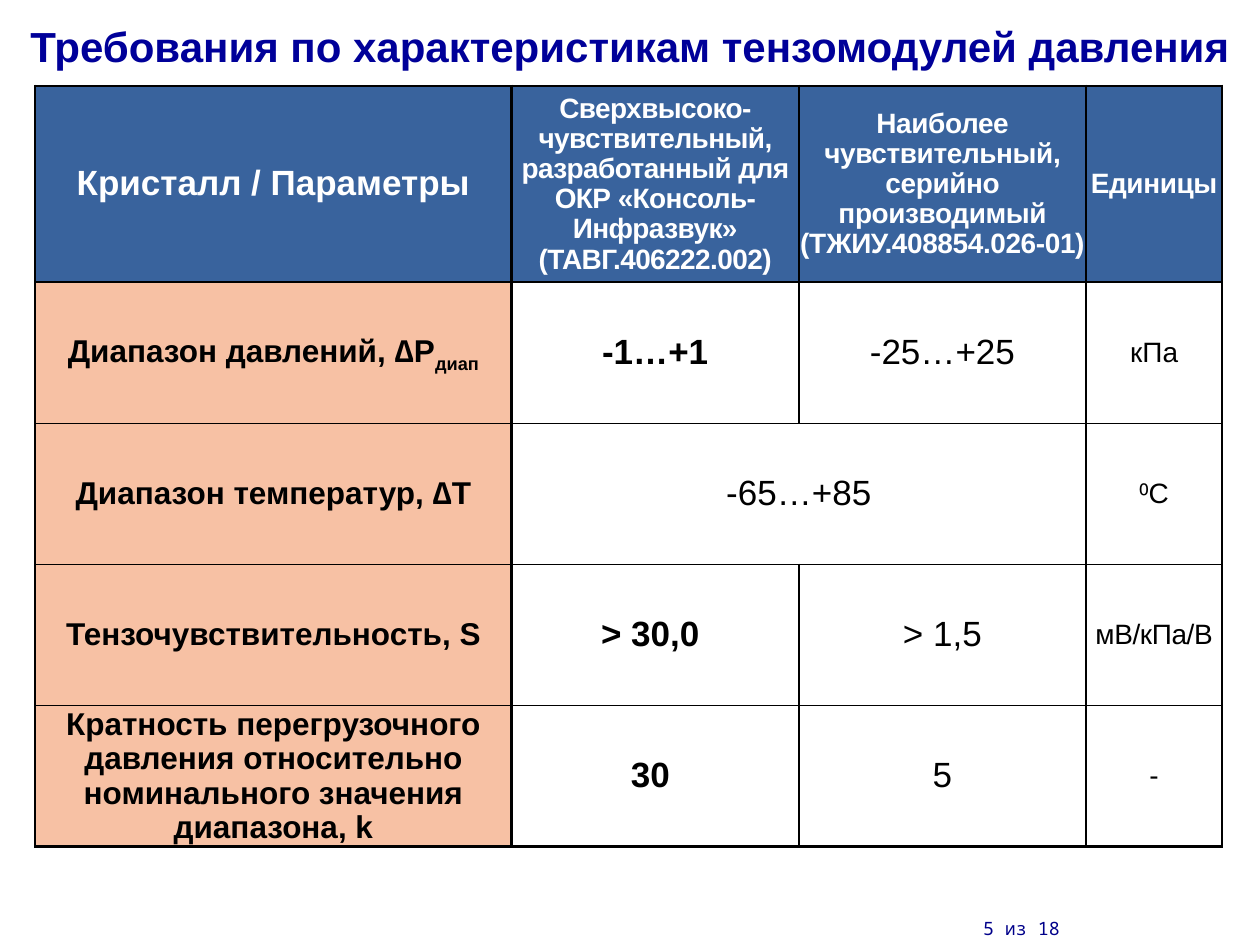
from lxml.etree import SubElement
from pptx import Presentation
from pptx.dml.color import RGBColor
from pptx.enum.text import MSO_ANCHOR, PP_ALIGN
from pptx.oxml.ns import qn
from pptx.util import Inches, Pt

COLORS = {
    "title": "000099",
    "footer": "00008A",
    "header": "39639D",
    "label": "F7C1A4",
    "white": "FFFFFF",
    "black": "000000",
}
COLUMN_WIDTHS = [3.78, 2.28, 2.28, 1.08]
ROW_HEIGHTS = [1.56, 1.12, 1.12, 1.12, 1.12]
VERTICAL_LINES = [1.5, 1.5, 1, 1.5, 1.5]
HORIZONTAL_LINES = [1.5, 1.5, 1, 1, 1, 1.5]
BODY_SIZES = [18, 20, 20, 16]
HEADER_SIZES = [20, 16, 16, 16]
HEADER_SPACING = [0, -0.3, -0.2, -0.2]
SUBSCRIPT = "диап"
TEMPERATURE_ROW = 2

ROWS = [
    [
        "Кристалл / Параметры",
        "Сверхвысоко-чувствительный, разработанный для ОКР «Консоль-Инфразвук»\n(ТАВГ.406222.002)",
        "Наиболее чувствительный, серийно производимый (ТЖИУ.408854.026-01)",
        "Единицы",
    ],
    ["Диапазон давлений, ∆P", "-1…+1", "-25…+25", "кПа"],
    ["Диапазон температур, ∆T", "-65…+85", "", "⁰С"],
    ["Тензочувствительность, S", "> 30,0 ", "> 1,5", "мВ/кПа/В"],
    [
        "Кратность перегрузочного давления относительно номинального значения диапазона, k",
        "30 ",
        "5",
        "-",
    ],
]


class SlideBuilder:
    """Holds the text style and the current slide, and adds elements to it."""

    def __init__(self, slide, font_name="Arial"):
        self.slide = slide
        self.font_name = font_name

    def add_run(self, paragraph, text, size, color, bold=False, spacing=0, baseline=0, font_name=None):
        run = paragraph.add_run()
        run.text = text
        run.font.name = font_name or self.font_name
        run.font.size = Pt(size)
        run.font.bold = bold
        run.font.color.rgb = RGBColor.from_string(COLORS[color])
        properties = run._r.get_or_add_rPr()
        if spacing:
            properties.set("spc", str(round(spacing * 100)))
        if baseline:
            properties.set("baseline", str(baseline * 1000))

    def add_title(self, text):
        title = self.slide.shapes.title
        title.left, title.top = Inches(0), Inches(0.16)
        title.width, title.height = Inches(10), Inches(0.4)
        title.text_frame.vertical_anchor = MSO_ANCHOR.MIDDLE
        paragraph = title.text_frame.paragraphs[0]
        paragraph.alignment = PP_ALIGN.CENTER
        self.add_run(paragraph, text, 24, "title", bold=True)

    def add_footer(self, text):
        box = self.slide.shapes.add_textbox(Inches(6.18), Inches(6.98), Inches(2.33), Inches(0.52))
        box.text_frame.word_wrap = True
        box.text_frame.vertical_anchor = MSO_ANCHOR.BOTTOM
        paragraph = box.text_frame.paragraphs[0]
        paragraph.alignment = PP_ALIGN.RIGHT
        self.add_run(paragraph, text, 10.5, "footer", font_name="Noto Sans Mono")

    def set_borders(self, cell, row, column):
        right = column + (cell.span_width if cell.is_merge_origin else 1)
        widths = {
            "a:lnL": VERTICAL_LINES[column],
            "a:lnR": VERTICAL_LINES[right],
            "a:lnT": HORIZONTAL_LINES[row],
            "a:lnB": HORIZONTAL_LINES[row + 1],
        }
        properties = cell._tc.get_or_add_tcPr()
        for tag, width in widths.items():
            line = SubElement(properties, qn(tag), w=str(Pt(width)))
            fill = SubElement(line, qn("a:solidFill"))
            SubElement(fill, qn("a:srgbClr"), val=COLORS["black"])

    def fill_cell(self, cell, color):
        if color:
            cell.fill.solid()
            cell.fill.fore_color.rgb = RGBColor.from_string(COLORS[color])
        else:
            cell.fill.background()

    def write_cell(self, cell, text, **style):
        cell.vertical_anchor = MSO_ANCHOR.MIDDLE
        cell.margin_left = cell.margin_right = cell.margin_top = Inches(0.01)
        cell.margin_bottom = 0
        for index, line in enumerate(text.split("\n")):
            paragraph = cell.text_frame.add_paragraph() if index else cell.text_frame.paragraphs[0]
            paragraph.alignment = PP_ALIGN.CENTER
            paragraph.line_spacing = 0.97
            if line:
                self.add_run(paragraph, line, **style)

    def add_table(self, rows):
        frame = self.slide.shapes.add_table(
            len(rows), len(COLUMN_WIDTHS), Inches(0.28), Inches(0.68),
            Inches(sum(COLUMN_WIDTHS)), Inches(sum(ROW_HEIGHTS)),
        )
        table = frame.table
        table.first_row = table.horz_banding = False
        for column, width in zip(table.columns, COLUMN_WIDTHS):
            column.width = Inches(width)
        for row, height in zip(table.rows, ROW_HEIGHTS):
            row.height = Inches(height)
        table.cell(TEMPERATURE_ROW, 1).merge(table.cell(TEMPERATURE_ROW, 2))
        for row, texts in enumerate(rows):
            for column, text in enumerate(texts):
                cell = table.cell(row, column)
                header = row == 0
                self.set_borders(cell, row, column)
                self.fill_cell(cell, "header" if header else "label" if column == 0 else None)
                self.write_cell(
                    cell, text,
                    size=(HEADER_SIZES if header else BODY_SIZES)[column],
                    color="white" if header else "black",
                    bold=header or column == 0 or (column == 1 and row != TEMPERATURE_ROW),
                    spacing=HEADER_SPACING[column] if header else -0.2 if text == "мВ/кПа/В" else 0,
                )
        pressure = table.cell(1, 0).text_frame.paragraphs[0]
        self.add_run(pressure, SUBSCRIPT, 18, "black", bold=True, baseline=-25)


def main():
    presentation = Presentation()
    presentation.slide_width, presentation.slide_height = Inches(10), Inches(7.5)
    builder = SlideBuilder(presentation.slides.add_slide(presentation.slide_layouts[5]))
    builder.add_title("Требования по характеристикам тензомодулей давления")
    builder.add_table(ROWS)
    builder.add_footer("5 из 18")
    presentation.save("out.pptx")


if __name__ == "__main__":
    main()
